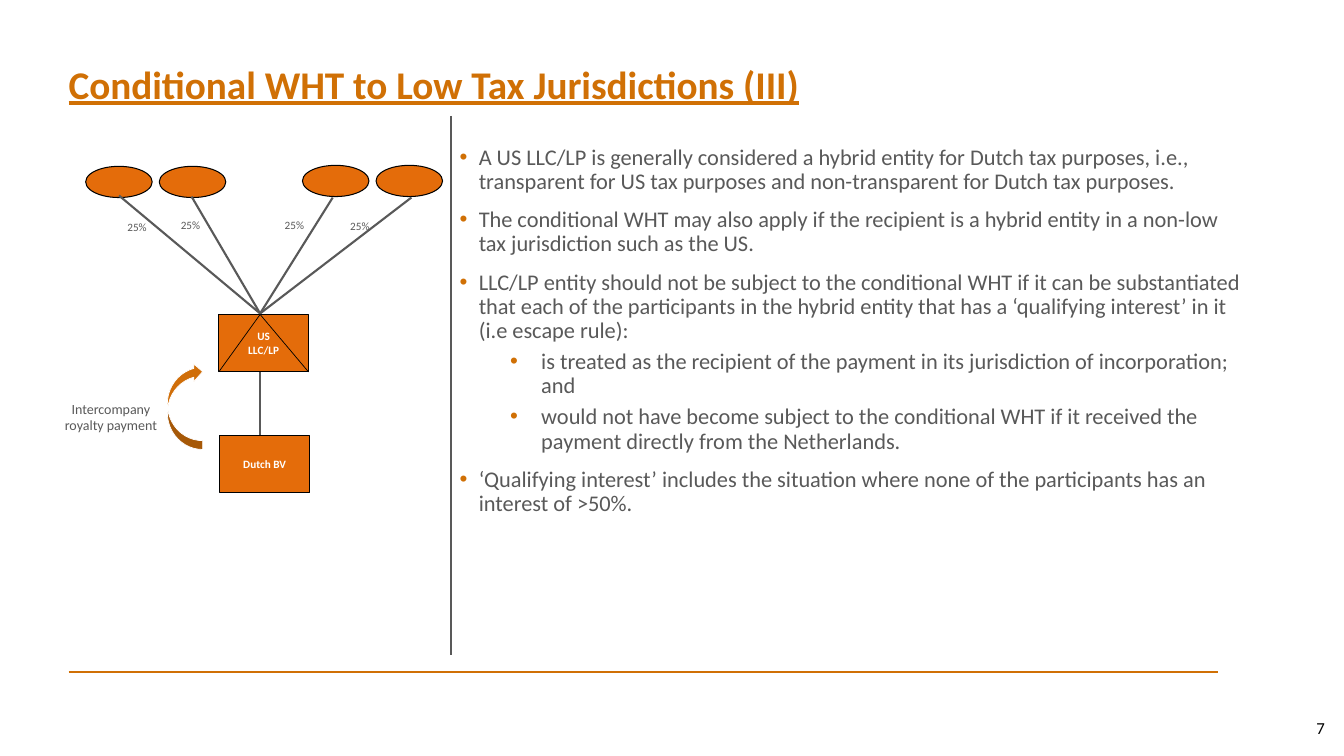
from lxml import etree
from pptx import Presentation
from pptx.dml.color import RGBColor
from pptx.enum.shapes import MSO_CONNECTOR, MSO_SHAPE
from pptx.enum.text import MSO_ANCHOR, PP_ALIGN
from pptx.oxml.ns import qn
from pptx.util import Inches, Pt

STRAIGHT = MSO_CONNECTOR.STRAIGHT
RECT, OVAL, CURVED = MSO_SHAPE.RECTANGLE, MSO_SHAPE.OVAL, MSO_SHAPE.CURVED_RIGHT_ARROW
TOP, MIDDLE = MSO_ANCHOR.TOP, MSO_ANCHOR.MIDDLE
LEFT, CENTER, RIGHT = PP_ALIGN.LEFT, PP_ALIGN.CENTER, PP_ALIGN.RIGHT

FONT = "Calibri"
ACCENT, BOX, ARROW, GREY = "D07005", "E46C0A", "D06E09", "595959"
BLACK, WHITE = "000000", "FFFFFF"

TITLE = "Conditional WHT to Low Tax Jurisdictions (III)"
BULLETS = [  # (level, text)
    (0, "A US LLC/LP is generally considered a hybrid entity for Dutch tax purposes, i.e., "
        "transparent for US tax purposes and non-transparent for Dutch tax purposes."),
    (0, "The conditional WHT may also apply if the recipient is a hybrid entity in a non-low "
        "tax jurisdiction such as the US."),
    (0, "LLC/LP entity should not be subject to the conditional WHT if it can be substantiated "
        "that each of the participants in the hybrid entity that has a ‘qualifying interest’ "
        "in it (i.e escape rule):"),
    (1, "is treated as the recipient of the payment in its jurisdiction of incorporation; and"),
    (1, "would not have become subject to the conditional WHT if it received the payment "
        "directly from the Netherlands."),
    (0, "‘Qualifying interest’ includes the situation where none of the participants has an "
        "interest of >50%."),
]
LEVELS = [(0.19, -0.19, 10), (0.81, -0.31, 5)]  # margin, indent, space before
# Participants: oval left and top, line start, share label left and top
PARTICIPANTS = [
    ((0.85, 1.65), (1.18, 1.94), (1.09, 2.14)),
    ((1.58, 1.65), (1.9, 1.95), (1.62, 2.12)),
    ((3.0, 1.64), (3.3, 1.96), (2.65, 2.12)),
    ((3.73, 1.64), (4.08, 1.96), (3.3, 2.13)),
]
SHARE = "25%"
OVAL_SIZE, LABEL_SIZE, BOX_SIZE = (0.66, 0.31), (0.54, 0.24), (0.89, 0.57)
LLC, BV = (2.17, 3.12), (2.18, 4.32)
HUB_X = 2.58

prs = Presentation()
prs.slide_width, prs.slide_height = Inches(13.33), Inches(7.5)
slide = prs.slides.add_slide(prs.slide_layouts[5])


def rgb(color):
    return RGBColor.from_string(color)


def add_run(p, text, size, color, bold=False):
    r = p.add_run()
    r.text = text
    f = r.font
    f.name, f.size, f.bold = FONT, Pt(size), bold
    f.color.rgb = rgb(color)
    return r


def write(sp, lines, size, color, align=CENTER, anchor=TOP, bold=False):
    tf = sp.text_frame
    tf.word_wrap, tf.vertical_anchor = True, anchor
    for i, text in enumerate(lines):
        p = tf.add_paragraph() if i else tf.paragraphs[0]
        p.alignment = align
        add_run(p, text, size, color, bold)


def add_text(pos, size):
    return slide.shapes.add_textbox(*map(Inches, (*pos, *size)))


def add_shape(kind, pos, size, fill=BOX, line=BLACK, width=0.75):
    sp = slide.shapes.add_shape(kind, *map(Inches, (*pos, *size)))
    sp.shadow.inherit = False
    sp.fill.solid()
    sp.fill.fore_color.rgb = rgb(fill)
    sp.line.color.rgb = rgb(line)
    sp.line.width = Pt(width)
    return sp


def add_line(start, end, color=GREY, width=1.5):
    c = slide.shapes.add_connector(STRAIGHT, *map(Inches, (*start, *end)))
    c.line.color.rgb = rgb(color)
    c.line.width = Pt(width)
    etree.SubElement(c._element.spPr, qn("a:effectLst"))


def add_bullet(p, level, text):
    margin, indent, before = LEVELS[level]
    p.level, p.line_spacing, p.space_before = level, 0.9, Pt(before)
    pPr = p._p.get_or_add_pPr()
    pPr.set("marL", str(Inches(margin)))
    pPr.set("indent", str(Inches(indent)))
    color = etree.SubElement(pPr, qn("a:buClr"))
    etree.SubElement(color, qn("a:srgbClr"), val=ACCENT)
    etree.SubElement(pPr, qn("a:buFont"), typeface="Arial")
    etree.SubElement(pPr, qn("a:buChar"), char="•")
    add_run(p, text, 16, GREY)


# Title, rules and page number
title = slide.shapes.title
title.left, title.top, title.width, title.height = map(Inches, (0.68, 0.46, 9, 0.79))
tf = title.text_frame
tf.margin_left = tf.margin_top = tf.margin_right = tf.margin_bottom = 0
tf.word_wrap, tf.vertical_anchor = True, MIDDLE
p = tf.paragraphs[0]
p.alignment, p.line_spacing = LEFT, Pt(30)
add_run(p, TITLE, 28, ACCENT, True).font.underline = True
add_line((0.68, 6.67), (12.08, 6.67), ACCENT, 1.25)
add_line((4.47, 1.15), (4.47, 6.5))
write(add_text((10.24, 7.02), (3, 0.4)), ["7"], 12, BLACK, RIGHT, MIDDLE)

# Explanation
tf = add_text((4.46, 1.4), (7.95, 4.3)).text_frame
tf.word_wrap = True
for i, (level, text) in enumerate(BULLETS):
    add_bullet(tf.add_paragraph() if i else tf.paragraphs[0], level, text)

# Ownership structure
hub = (HUB_X, LLC[1])
llc_bottom = LLC[1] + BOX_SIZE[1]
llc = add_shape(RECT, LLC, BOX_SIZE)
write(llc, ["US", "LLC/LP"], 8, WHITE, anchor=MIDDLE, bold=True)
bv = add_shape(RECT, BV, BOX_SIZE)
write(bv, ["Dutch BV"], 8, WHITE, anchor=MIDDLE, bold=True)
add_line((HUB_X, llc_bottom), (HUB_X, BV[1]))
for corner_x in (LLC[0], LLC[0] + BOX_SIZE[0]):
    add_line(hub, (corner_x, llc_bottom), BLACK, 0.5)
for oval_pos, line_start, label_pos in PARTICIPANTS:
    add_shape(OVAL, oval_pos, OVAL_SIZE)
    add_line(line_start, (HUB_X, 3.11))
    write(add_text(label_pos, LABEL_SIZE), [SHARE], 8, GREY)

# Royalty payment
royalty = add_shape(CURVED, (1.66, 3.6), (0.35, 0.86), ARROW, WHITE, 0.5)
royalty._element.spPr.find(qn("a:xfrm")).set("flipV", "1")
write(add_text((0.32, 3.92), (1.56, 0.44)), ["Intercompany", "royalty payment"], 10, GREY)

prs.save("out.pptx")
